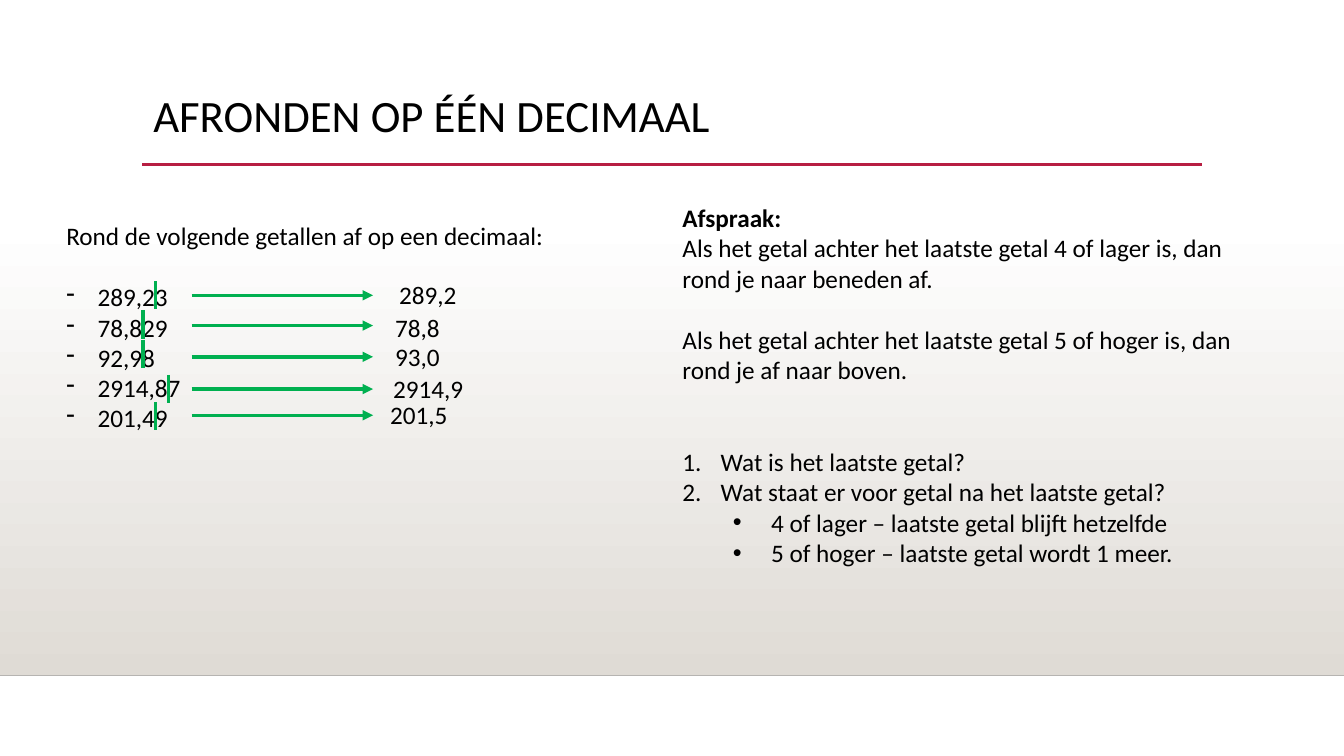
from dataclasses import dataclass

from lxml.etree import SubElement
from pptx import Presentation
from pptx.dml.color import RGBColor
from pptx.enum.shapes import MSO_CONNECTOR, MSO_SHAPE
from pptx.enum.text import MSO_ANCHOR, MSO_AUTO_SIZE, PP_ALIGN
from pptx.oxml.ns import qn
from pptx.util import Inches, Pt

TITLE = "AFRONDEN OP ÉÉN DECIMAAL"
TASK = "Rond de volgende getallen af op een decimaal:"
# number, result, result left, result top, arrow y, cut x, cut top
SUMS = [
    ("289,23", "289,2", 3.86, 2.72, 2.93, 1.54, 2.79),
    ("78,829", "78,8", 3.82, 3.05, 3.23, 1.42, 3.08),
    ("92,98", "93,0", 3.82, 3.34, 3.54, 1.42, 3.37),
    ("2914,87", "2914,9", 3.8, 3.65, 3.86, 1.67, 3.72),
    ("201,49", "201,5", 3.77, 3.91, 4.12, 1.54, 3.99),
]
# text, kind of paragraph
RULES = [
    ("Afspraak:", "bold"),
    ("Als het getal achter het laatste getal 4 of lager is, dan rond je naar beneden af.", "plain"),
    ("Als het getal achter het laatste getal 5 of hoger is, dan rond je af naar boven.", "apart"),
]
STEPS = [
    ("Wat is het laatste getal?", "step"),
    ("Wat staat er voor getal na het laatste getal?", "step"),
    ("4 of lager – laatste getal blijft hetzelfde", "point"),
    ("5 of hoger – laatste getal wordt 1 meer.", "point"),
]
# kind: left margin, hanging indent, bullet tag, bullet attributes
MARKS = {
    "dash": (0.31, 0.31, "a:buChar", {"char": "-"}),
    "step": (0.38, 0.38, "a:buAutoNum", {"type": "arabicPeriod"}),
    "point": (0.88, 0.38, "a:buChar", {"char": "•"}),
}


@dataclass(frozen=True)
class Theme:
    font: str = "Calibri"
    head: Pt = Pt(32)
    body: Pt = Pt(18)
    gap: Pt = Pt(22)
    rule: Pt = Pt(2.5)
    ink: RGBColor = RGBColor(0, 0, 0)
    white: RGBColor = RGBColor(0xFF, 0xFF, 0xFF)
    sand: RGBColor = RGBColor(0xDF, 0xDB, 0xD5)
    edge: RGBColor = RGBColor(0xB6, 0xB4, 0xB1)
    red: RGBColor = RGBColor(0xB7, 0x1E, 0x42)
    green: RGBColor = RGBColor(0x00, 0xB0, 0x50)


LOOK = Theme()


def style(para, size, bold=False):
    font = para.font
    font.name, font.size, font.bold = LOOK.font, size, bold
    font.color.rgb = LOOK.ink


def mark(para, kind):
    """Give a paragraph its bullet or number and hanging indent."""
    left, hang, tag, attrs = MARKS[kind]
    props = para._p.get_or_add_pPr()
    props.set("marL", str(Inches(left)))
    props.set("indent", str(-Inches(hang)))
    if kind == "point":
        para.level = 1
        SubElement(props, qn("a:buFont"), typeface="Arial")
    SubElement(props, qn(tag), attrs)


def write(slide, items, left, top, width, height):
    box = slide.shapes.add_textbox(*map(Inches, (left, top, width, height)))
    frame = box.text_frame
    frame.word_wrap = True
    frame.auto_size = MSO_AUTO_SIZE.SHAPE_TO_FIT_TEXT
    for i, (text, kind) in enumerate(items):
        para = frame.add_paragraph() if i else frame.paragraphs[0]
        para.text = text
        # A new kind of list, or a paragraph set apart, follows an open line
        if kind == "apart" or (kind == "dash" and items[i - 1][1] != "dash"):
            para.space_before = LOOK.gap
        if kind in MARKS:
            mark(para, kind)
        style(para, LOOK.body, kind == "bold")


def draw(slide, start, end, color, width=LOOK.rule, arrow=False):
    line = slide.shapes.add_connector(
        MSO_CONNECTOR.STRAIGHT, *map(Inches, (*start, *end)))
    line.line.color.rgb = color
    line.line.width = width
    if arrow:
        SubElement(line.line._get_or_add_ln(), qn("a:tailEnd"), type="triangle")
    SubElement(line._element.spPr, qn("a:effectLst"))


def backdrop(slide):
    floor = slide.shapes.add_shape(
        MSO_SHAPE.RECTANGLE, *map(Inches, (0, 2.21, 13.33, 4.49)))
    floor.shadow.inherit = False
    floor.line.fill.background()
    floor.fill.gradient()
    floor.fill.gradient_angle = 270
    for stop, color in zip(floor.fill.gradient_stops, (LOOK.white, LOOK.sand)):
        stop.color.rgb = color
    draw(slide, (0, 6.7), (13.33, 6.7), LOOK.edge, Pt(1))
    draw(slide, (1.41, 1.63), (11.92, 1.63), LOOK.red)


def heading(slide):
    title = slide.shapes.title
    title.left, title.top, title.width, title.height = map(
        Inches, (1.42, 0.88, 10.5, 1.15))
    title.text = TITLE
    title.text_frame.vertical_anchor = MSO_ANCHOR.TOP
    para = title.text_frame.paragraphs[0]
    para.alignment = PP_ALIGN.LEFT
    para.line_spacing = 0.9
    style(para, LOOK.head)


def main():
    deck = Presentation()
    deck.slide_width, deck.slide_height = Inches(13.33), Inches(7.5)
    slide = deck.slides.add_slide(deck.slide_layouts[5])
    backdrop(slide)
    heading(slide)
    write(slide, RULES, 6.67, 1.96, 5.69, 1.92)
    write(slide, STEPS, 6.67, 4.38, 5.24, 1.62)
    task = [(TASK, "plain")] + [(row[0], "dash") for row in SUMS]
    write(slide, task, 0.56, 2.14, 5.26, 2.22)
    for _, result, left, top, mid, cut, high in SUMS:
        draw(slide, (1.9, mid), (3.7, mid), LOOK.green, arrow=True)
        write(slide, [(result, "plain")], left, top, 0.93, 0.4)
        draw(slide, (cut, high), (cut, high + 0.28), LOOK.green)
    deck.save("out.pptx")


if __name__ == "__main__":
    main()
